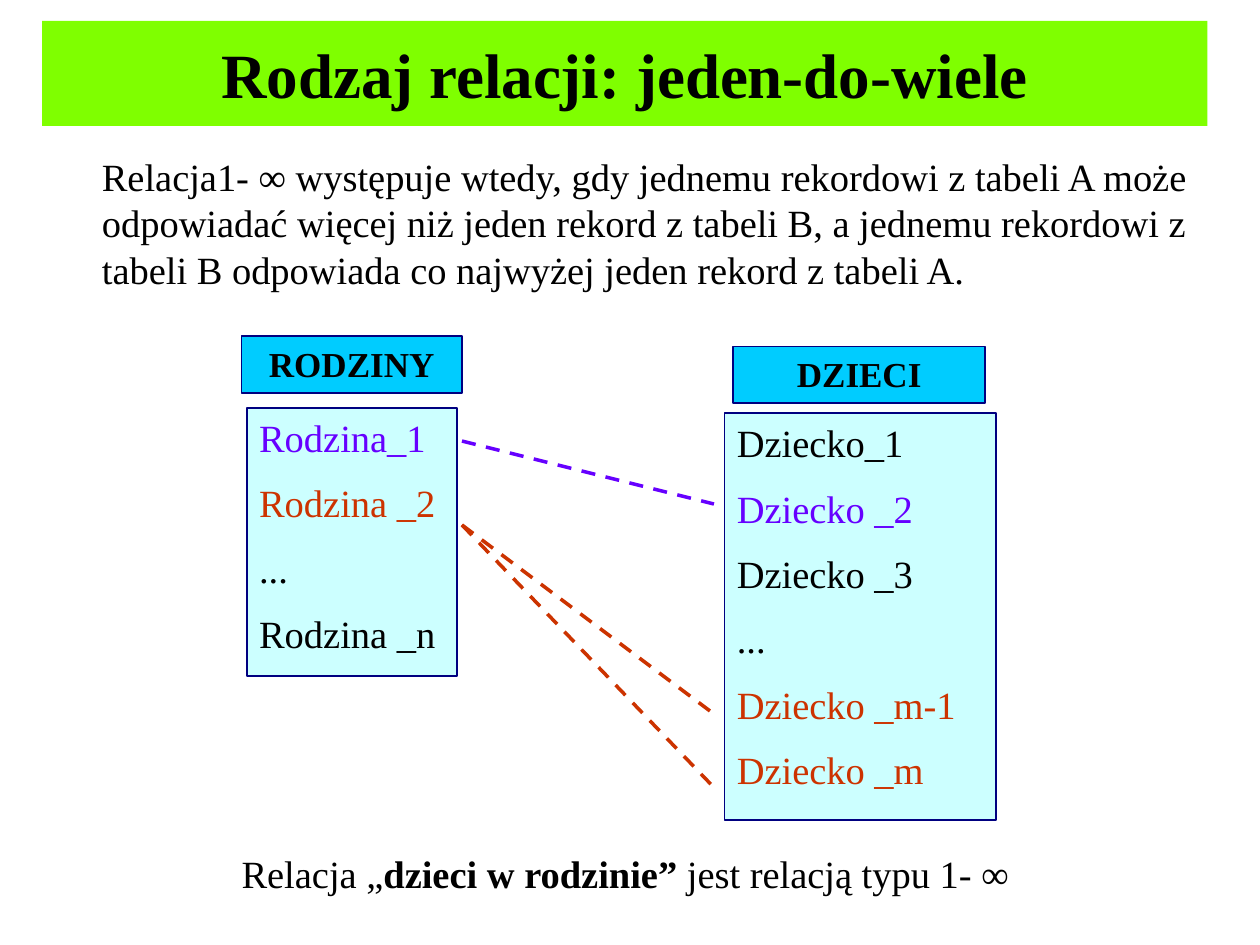
import pptx
import pptx.dml.color
import pptx.enum.dml
import pptx.enum.shapes
import pptx.enum.text
import pptx.oxml.ns
import pptx.util
from lxml import etree

Pt = pptx.util.Pt
Align = pptx.enum.text.PP_ALIGN
Anchor = pptx.enum.text.MSO_ANCHOR
qn = pptx.oxml.ns.qn


def rgb(value):
    return pptx.dml.color.RGBColor.from_string(value)


THEME = {
    "font": "Times New Roman",
    "title_size": Pt(36),
    "text_size": Pt(22),
    "header_size": Pt(20),
    "text": rgb("000000"),
    "title_fill": rgb("7FFF00"),
    "header_fill": rgb("00CCFF"),
    "list_fill": rgb("CCFFFF"),
    "border": rgb("000080"),
    "first": rgb("6600FF"),
    "second": rgb("CC3300"),
}


def format_paragraph(paragraph, size, color="text", bold=None, align=Align.LEFT):
    paragraph.alignment = align
    font = paragraph.font
    font.name = THEME["font"]
    font.size = size
    font.bold = bold
    font.color.rgb = THEME[color]


def place(shape, left, top, width, height):
    shape.left, shape.top = Pt(left), Pt(top)
    shape.width, shape.height = Pt(width), Pt(height)
    shape.text_frame.auto_size = pptx.enum.text.MSO_AUTO_SIZE.NONE


presentation = pptx.Presentation()
presentation.slide_width, presentation.slide_height = Pt(720), Pt(540)
slide = presentation.slides.add_slide(presentation.slide_layouts[1])

# Title
title = slide.shapes.title
place(title, 24, 12, 666, 60)
title.fill.solid()
title.fill.fore_color.rgb = THEME["title_fill"]
title.text_frame.text = "Rodzaj relacji: jeden-do-wiele"
title.text_frame.vertical_anchor = Anchor.MIDDLE
format_paragraph(title.text_frame.paragraphs[0], THEME["title_size"], bold=True, align=Align.CENTER)

# Definition, indented and without a bullet
body = slide.placeholders[1]
place(body, 24, 84, 666, 90)
body.text_frame.text = (
    "Relacja1- ∞ występuje wtedy, gdy jednemu rekordowi z tabeli A może "
    "odpowiadać więcej niż jeden rekord z tabeli B, a jednemu rekordowi z "
    "tabeli B odpowiada co najwyżej jeden rekord z tabeli A."
)
definition = body.text_frame.paragraphs[0]
format_paragraph(definition, THEME["text_size"])
properties = definition._p.get_or_add_pPr()
properties.set("marL", str(Pt(27)))
properties.set("indent", "0")
properties.insert_element_before(
    etree.Element(qn("a:buNone")), "a:tabLst", "a:defRPr", "a:extLst"
)

# Conclusion
conclusion = slide.shapes.add_textbox(0, 0, 0, 0)
place(conclusion, 131, 482, 454, 34)
conclusion.text_frame.word_wrap = False
paragraph = conclusion.text_frame.paragraphs[0]
format_paragraph(paragraph, THEME["text_size"])
for text, bold in [
    ("Relacja „", False),
    ("dzieci w rodzinie”", True),
    (" jest relacją typu 1- ∞", False),
]:
    run = paragraph.add_run()
    run.text = text
    run.font.bold = bold

# The two tables: a list of records under a header
families = [("Rodzina_1", "first"), ("Rodzina _2", "second"), ("...", "text"), ("Rodzina _n", "text")]
children = [
    ("Dziecko_1", "text"), ("Dziecko _2", "first"), ("Dziecko _3", "text"),
    ("...", "text"), ("Dziecko _m-1", "second"), ("Dziecko _m", "second"),
]
boxes = [
    ((141, 233, 120, 153.5), "list_fill", families),
    ((138, 192, 126, 32.5), "header_fill", [("RODZINY", "text")]),
    ((414, 236, 155, 232.5), "list_fill", children),
    ((419, 198, 144, 32.5), "header_fill", [("DZIECI", "text")]),
]
for bounds, fill, rows in boxes:
    is_header = fill == "header_fill"
    box = slide.shapes.add_shape(pptx.enum.shapes.MSO_SHAPE.RECTANGLE, 0, 0, 0, 0)
    place(box, *bounds)
    box.shadow.inherit = False
    box.fill.solid()
    box.fill.fore_color.rgb = THEME[fill]
    box.line.color.rgb = THEME["border"]
    box.line.width = Pt(1)
    frame = box.text_frame
    frame.word_wrap = True
    frame.vertical_anchor = Anchor.TOP
    frame.text = "\n".join(text for text, color in rows)
    for paragraph, (text, color) in zip(frame.paragraphs, rows):
        paragraph.space_before = Pt(11)
        format_paragraph(
            paragraph,
            THEME["header_size" if is_header else "text_size"],
            color,
            is_header,
            Align.CENTER if is_header else Align.LEFT,
        )

# Dashed links from families to their children
for start_y, end_y, color in [(252, 288, "first"), (300, 408, "second"), (300, 450, "second")]:
    link = slide.shapes.add_connector(
        pptx.enum.shapes.MSO_CONNECTOR.STRAIGHT, Pt(264), Pt(start_y), Pt(408), Pt(end_y)
    )
    link.line.color.rgb = THEME[color]
    link.line.width = Pt(2)
    link.line.dash_style = pptx.enum.dml.MSO_LINE.DASH
    etree.SubElement(link._element.spPr, qn("a:effectLst"))

presentation.save("out.pptx")
